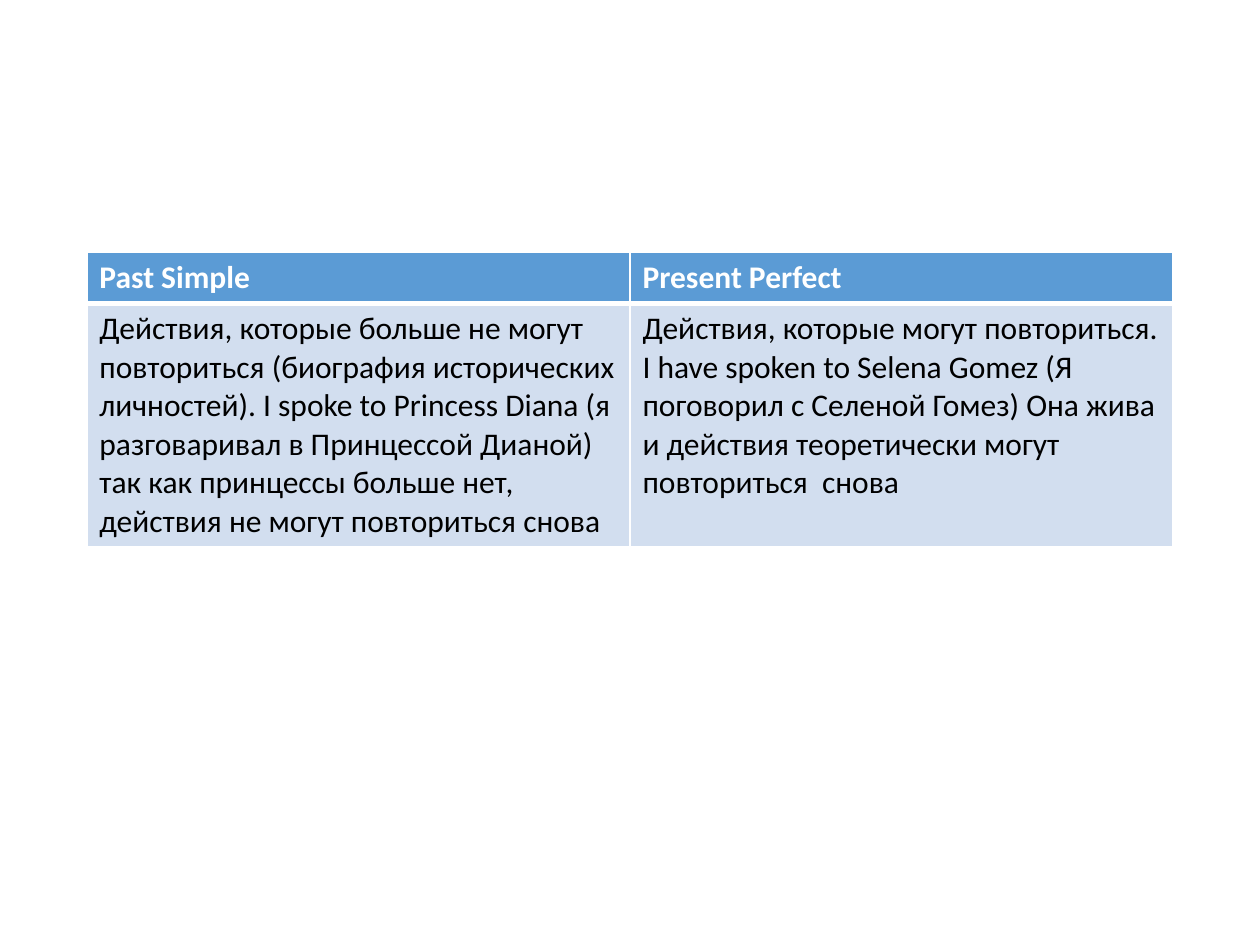
from lxml.etree import SubElement
from pptx import Presentation
from pptx.dml.color import RGBColor
from pptx.oxml.ns import qn
from pptx.util import Cm, Pt

ROWS = [
    ("Past Simple", "Present Perfect"),
    (
        "Действия, которые больше не могут повториться (биография исторических "
        "личностей). I spoke to Princess Diana (я разговаривал в Принцессой Дианой) "
        "так как принцессы больше нет, действия не могут повториться снова",
        "Действия, которые могут повториться. I have spoken to Selena Gomez "
        "(Я поговорил с Селеной Гомез) Она жива и действия теоретически могут "
        "повториться  снова",
    ),
]
HEIGHTS = (1.04, 4.83)
WHITE = "FFFFFF"


def tint(color, code):
    """Give a colour format the colour of a hex string."""
    color.rgb = RGBColor.from_string(code)


def border(cell, widths):
    """Draw white cell borders, with a width in points for each side."""
    props = cell._tc.get_or_add_tcPr()
    for side, width in zip("LRTB", widths):
        line = SubElement(props, qn(f"a:ln{side}"), w=str(Pt(width)))
        fill = SubElement(line, qn("a:solidFill"))
        SubElement(fill, qn("a:srgbClr"), val=WHITE)


def style(cell, text, head):
    """Fill one cell and format its text as heading or body."""
    border(cell, (1, 1, 1 if head else 3, 3 if head else 1))
    cell.fill.solid()
    tint(cell.fill.fore_color, "5B9BD5" if head else "D2DEEF")
    cell.text_frame.text = text
    font = cell.text_frame.paragraphs[0].runs[0].font
    font.name, font.size, font.bold = "Calibri", Pt(18), head
    tint(font.color, WHITE if head else "000000")


def compare(slide, left, top, width):
    """Place the table of the two tenses in the given box."""
    frame = slide.shapes.add_table(
        len(ROWS), len(ROWS[0]), left, top, width, Cm(sum(HEIGHTS))
    )
    table = frame.table
    for index, (texts, height) in enumerate(zip(ROWS, HEIGHTS)):
        table.rows[index].height = Cm(height)
        for place, text in enumerate(texts):
            style(table.cell(index, place), text, index == 0)


def main():
    """Build the slide and save it."""
    deck = Presentation()
    deck.slide_width, deck.slide_height = Cm(25.4), Cm(19.05)
    slide = deck.slides.add_slide(deck.slide_layouts[6])
    compare(slide, Cm(1.75), Cm(5.08), Cm(21.9))
    deck.save("out.pptx")


if __name__ == "__main__":
    main()
